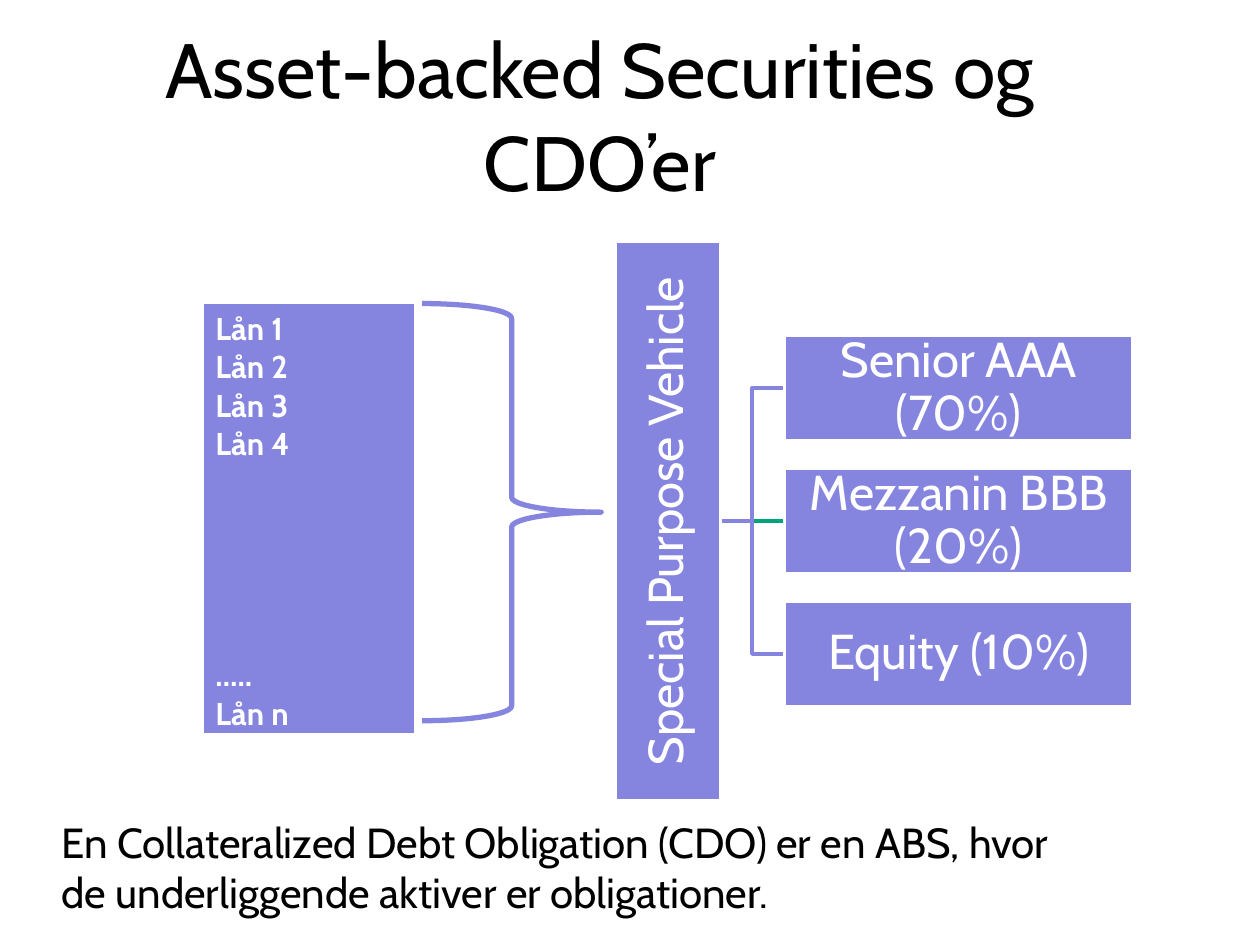
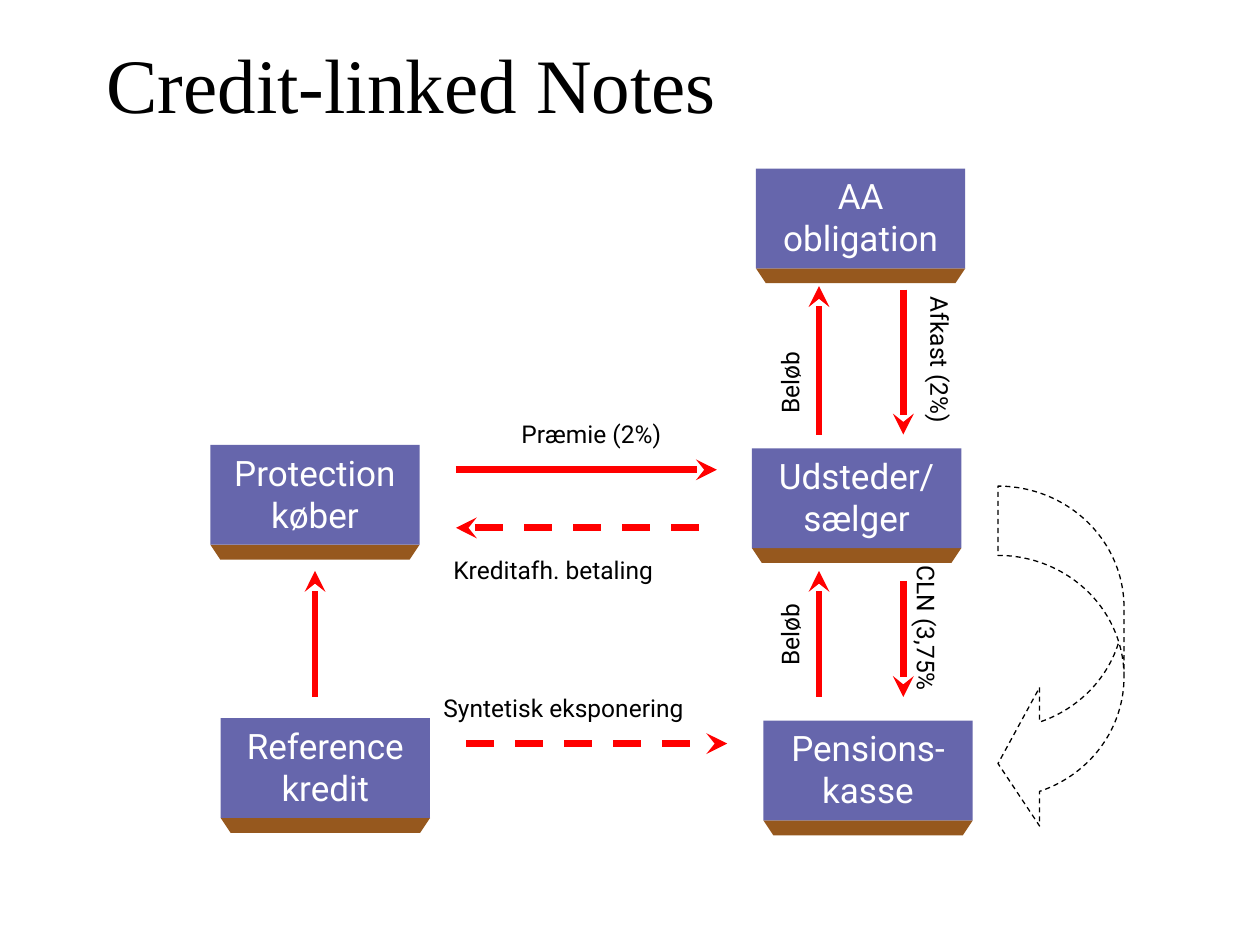
from dataclasses import dataclass

from lxml import etree
from pptx import Presentation
from pptx.dml.color import RGBColor
from pptx.enum import dml, shapes, text
from pptx.oxml.ns import qn
from pptx.util import Cm, Pt

Kind = shapes.MSO_SHAPE
Align = text.PP_ALIGN
Anchor = text.MSO_ANCHOR


@dataclass(frozen=True)
class Theme:
    violet: str = "8585E0"
    face: str = "6666AC"
    bevel: str = "96581E"
    green: str = "00A37B"
    red: str = "FF0000"
    white: str = "FFFFFF"
    black: str = "000000"
    sans: str = "Cabin"
    label_font: str = "Roboto"
    serif: str = "Times New Roman"
    title: int = 44
    box: int = 28
    body: int = 24
    node: int = 20
    loan: int = 18
    label: int = 14


class Painter:
    def __init__(self, deck, theme):
        self.deck = deck
        self.theme = theme
        self.slide = None

    def new_slide(self):
        self.slide = self.deck.slides.add_slide(self.deck.slide_layouts[6])

    def set_lines(self, frame, lines, font, size, color, align=Align.LEFT,
                  spacing=None, bold=False):
        for number, line in enumerate(lines):
            para = frame.paragraphs[0] if number == 0 else frame.add_paragraph()
            para.text = line
            para.alignment = align
            para.line_spacing = spacing
            para.font.name = font
            para.font.size = Pt(size)
            para.font.bold = bold
            para.font.color.rgb = RGBColor.from_string(color)

    def text(self, area, lines, font, size, align=Align.LEFT, anchor=Anchor.TOP,
             wrap=True, rotation=0):
        box = self.slide.shapes.add_textbox(*map(Cm, area))
        box.rotation = rotation
        box.text_frame.word_wrap = wrap
        box.text_frame.vertical_anchor = anchor
        self.set_lines(box.text_frame, lines, font, size, self.theme.black, align)

    def title(self, left, top, wording, font, align=Align.LEFT):
        self.text((left, top, 21.59, 3.18), [wording], font, self.theme.title,
                  align, Anchor.MIDDLE)

    def label(self, left, top, width, wording, rotation=0):
        self.text((left, top, width, 0.86), [wording], self.theme.label_font,
                  self.theme.label, wrap=False, rotation=rotation)

    def style(self, shape, fill=None, line=None, width=1.0):
        shape.shadow.inherit = False
        if fill:
            shape.fill.solid()
            shape.fill.fore_color.rgb = RGBColor.from_string(fill)
        else:
            shape.fill.background()
        if line:
            shape.line.color.rgb = RGBColor.from_string(line)
            shape.line.width = Pt(width)
        else:
            shape.line.fill.background()

    def shape(self, kind, area, fill=None, line=None, width=1.0):
        shape = self.slide.shapes.add_shape(kind, *map(Cm, area))
        self.style(shape, fill, line, width)
        return shape

    def outline(self, points, closed, fill=None, line=None, width=1.0):
        points = [(Cm(x), Cm(y)) for x, y in points]
        builder = self.slide.shapes.build_freeform(*points[0])
        builder.add_line_segments(points[1:], close=closed)
        self.style(builder.convert_to_shape(), fill, line, width)

    def box(self, area, wording, rotation=0):
        theme = self.theme
        box = self.shape(Kind.RECTANGLE, area, theme.violet, theme.white, 2)
        box.rotation = rotation
        frame = box.text_frame
        frame.word_wrap = True
        frame.vertical_anchor = Anchor.MIDDLE
        frame.margin_left = frame.margin_right = Cm(0.05)
        frame.margin_top = frame.margin_bottom = Cm(0.05)
        self.set_lines(frame, [wording], theme.sans, theme.box, theme.white,
                       Align.CENTER, 0.9)

    def node(self, left, top, lines):
        theme = self.theme
        width, height, depth, inset = 4.22, 2.01, 0.3, 0.2
        right, bottom = left + width, top + height
        self.outline([(left, bottom), (right, bottom),
                      (right - inset, bottom + depth),
                      (left + inset, bottom + depth)], True, theme.bevel)
        face = self.shape(Kind.RECTANGLE, (left, top, width, height), theme.face)
        face.text_frame.word_wrap = False
        face.text_frame.vertical_anchor = Anchor.TOP
        self.set_lines(face.text_frame, lines, theme.label_font, theme.node,
                       theme.white, Align.CENTER)

    def line(self, start, stop, color, width):
        line = self.slide.shapes.add_connector(
            shapes.MSO_CONNECTOR.STRAIGHT, *map(Cm, start + stop))
        line.line.color.rgb = RGBColor.from_string(color)
        line.line.width = Pt(width)
        etree.SubElement(line._element.spPr, qn("a:effectLst"))
        return line

    def arrow(self, start, stop, dashed=False, end="a:tailEnd"):
        arrow = self.line(start, stop, self.theme.red, 4)
        if dashed:
            arrow.line.dash_style = dml.MSO_LINE.DASH
        stroke = arrow._element.spPr.find(qn("a:ln"))
        etree.SubElement(stroke, qn(end), type="stealth")

    def loan_table(self, area, lines, gap_line, gap):
        theme = self.theme
        table = self.slide.shapes.add_table(1, 1, *map(Cm, area)).table
        cell = table.cell(0, 0)
        self.set_lines(cell.text_frame, lines, theme.sans, theme.loan,
                       theme.white, bold=True)
        cell.text_frame.paragraphs[gap_line].space_before = Pt(gap)
        properties = cell._tc.get_or_add_tcPr()
        for side, width in (("L", 1), ("R", 1), ("T", 1), ("B", 3)):
            border = etree.SubElement(properties, qn(f"a:ln{side}"),
                                      w=str(Pt(width)))
            fill = etree.SubElement(border, qn("a:solidFill"))
            etree.SubElement(fill, qn("a:srgbClr"), val=theme.white)
        cell.fill.solid()
        cell.fill.fore_color.rgb = RGBColor.from_string(theme.violet)


def securities_slide(painter):
    theme = painter.theme
    painter.new_slide()
    painter.title(1.3, 0.71, "Asset-backed Securities og CDO’er", theme.sans,
                  Align.CENTER)

    tranches = ["Senior AAA (70%)", "Mezzanin BBB (20%)", "Equity (10%)"]
    left, top, width, height, pitch = 15.82, 6.76, 7.01, 2.13, 2.68
    trunk, fork = 14.53, 15.16
    senior, middle, equity = (top + row * pitch + height / 2 for row in range(3))
    painter.line((trunk, middle), (left, middle), theme.green, 2)
    for level in (equity, senior):
        painter.outline([(trunk, middle), (fork, middle), (fork, level),
                         (left, level)], False, line=theme.violet, width=2)
    painter.box((7.82, top + pitch, 11.28, height), "Special Purpose Vehicle", 270)
    for row, tranche in enumerate(tranches):
        painter.box((left, top + row * pitch, width, height), tranche)

    loans = [f"Lån {number}" for number in (1, 2, 3, 4)] + ["…..", "Lån n"]
    painter.loan_table((4.09, 6.12, 4.27, 8.64), loans, 4, 110)
    painter.shape(Kind.RIGHT_BRACE, (8.51, 6.12, 3.61, 8.41),
                  line=theme.violet, width=3)
    painter.text((0.99, 16.33, 22.2, 2.4),
                 ["En Collateralized Debt Obligation (CDO) er en ABS, hvor",
                  "de underliggende aktiver er obligationer."],
                 theme.sans, theme.body)


def notes_slide(painter):
    theme = painter.theme
    painter.new_slide()
    painter.title(1.9, 0.08, "Credit-linked Notes", theme.serif)

    for left, top, lines in (
        (15.39, 14.53, ["Pensions-", "kasse"]),
        (4.45, 14.48, ["Reference", "kredit"]),
        (15.16, 9.04, ["Udsteder/", "sælger"]),
        (4.24, 8.97, ["Protection", "køber"]),
        (15.24, 3.4, ["AA", "obligation"]),
    ):
        painter.node(left, top, lines)

    amount, payoff = 16.51, 18.21
    painter.arrow((6.35, 14.05), (6.35, 11.51))
    painter.arrow((amount, 14.05), (amount, 11.51))
    painter.arrow((payoff, 11.71), (payoff, 14.05))
    painter.arrow((amount, 8.76), (amount, 5.77))
    painter.arrow((payoff, 5.84), (payoff, 8.76))
    painter.arrow((9.19, 9.47), (14.45, 9.47))
    painter.arrow((9.19, 10.64), (14.45, 10.64), True, "a:headEnd")
    painter.arrow((9.4, 14.99), (14.66, 14.99), True)

    painter.label(8.69, 13.84, 5.59, "Syntetisk eksponering")
    painter.label(10.26, 8.33, 3.53, "Præmie (2%)")
    painter.label(8.89, 11.07, 4.93, "Kreditafh. betaling")
    for top in (7.24, 12.32):
        painter.label(15.01, top, 1.83, "Beløb", 270)
    painter.label(17.07, 12.32, 3.2, "CLN (3,75%", 90)
    painter.label(17.32, 6.93, 3.25, "Afkast (2%)", 90)

    loop = painter.shape(Kind.CURVED_LEFT_ARROW, (20.12, 9.8, 2.54, 6.99),
                         line=theme.black, width=0.75)
    loop.line.dash_style = dml.MSO_LINE.DASH
    for index, value in enumerate((0.55, 1.1, 0.33)):
        loop.adjustments[index] = value


def main():
    deck = Presentation()
    deck.slide_width, deck.slide_height = Cm(25.4), Cm(19.05)
    painter = Painter(deck, Theme())
    securities_slide(painter)
    notes_slide(painter)
    deck.save("out.pptx")


if __name__ == "__main__":
    main()
